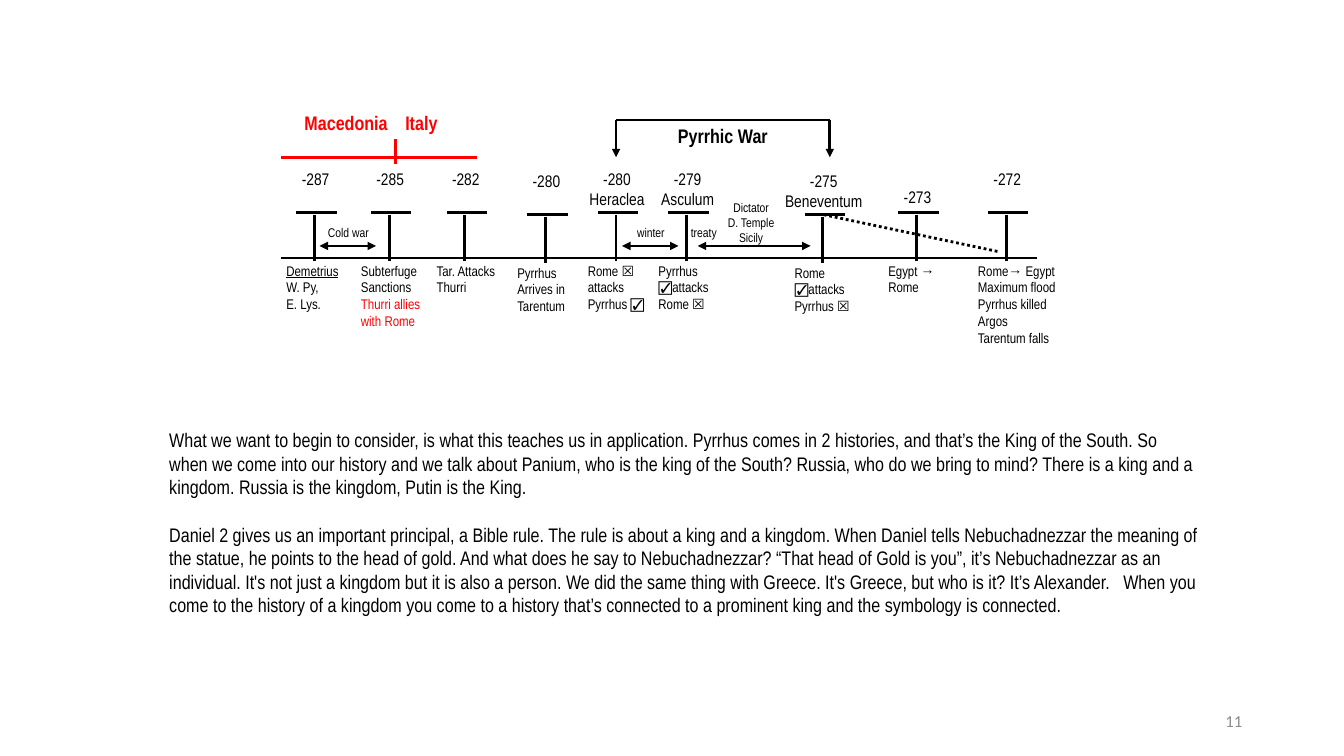
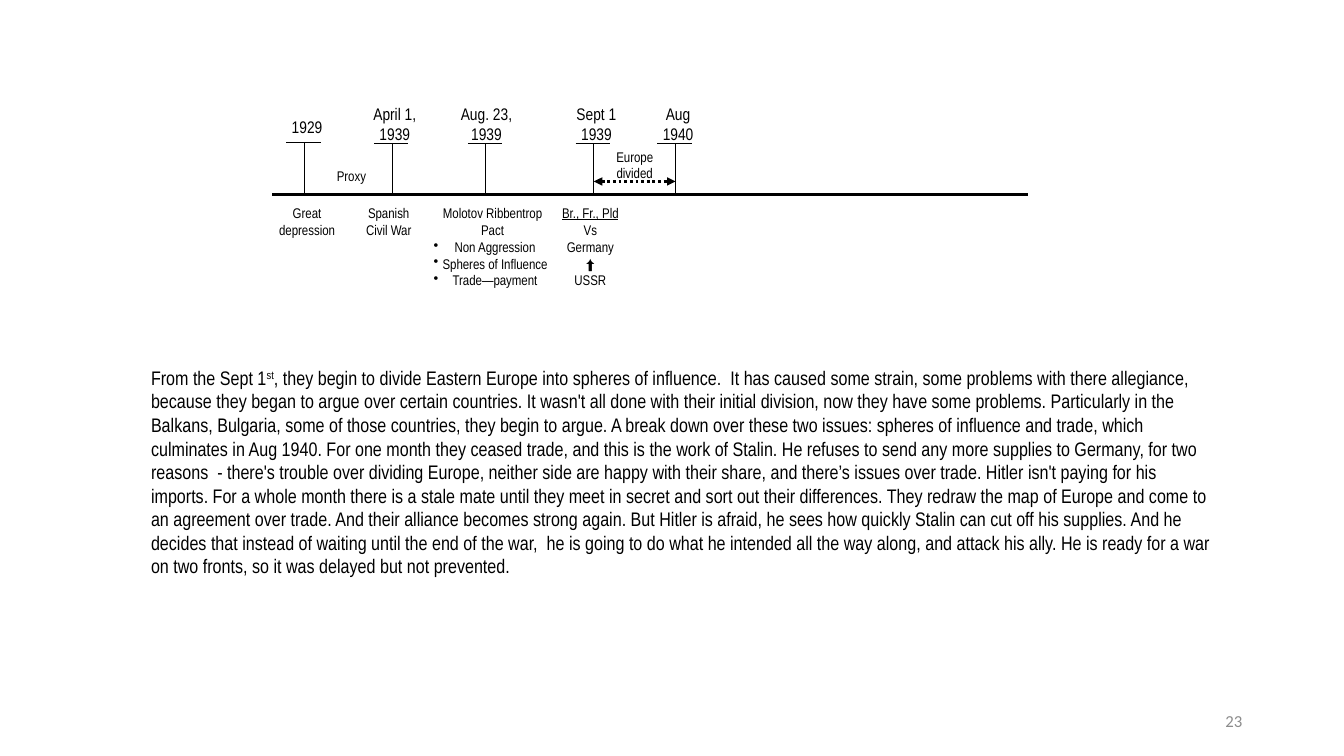
from dataclasses import dataclass
from lxml.etree import SubElement
from pptx import Presentation
from pptx.dml.color import RGBColor
from pptx.enum.dml import MSO_LINE
from pptx.enum.shapes import MSO_CONNECTOR
from pptx.enum.text import MSO_ANCHOR, PP_ALIGN
from pptx.oxml.ns import qn
from pptx.util import Inches, Pt


@dataclass(frozen=True)
class Theme:
    ink: RGBColor = RGBColor(0, 0, 0)
    accent: RGBColor = RGBColor(255, 0, 0)
    muted: RGBColor = RGBColor(0x8C, 0x8C, 0x8C)
    font: str = "Arial Narrow"
    symbol_font: str = "Arial"
    number_font: str = "Calibri"
    body: int = 14
    date: int = 12
    label: int = 10
    span: int = 9
    heavy: float = 2
    fine: float = 0.75


theme = Theme()
SYMBOL = {"font": theme.symbol_font}
UNDERLINED = {"underline": True}
RED = {"color": theme.accent}
SUPERSCRIPT = {"baseline": "30000"}


def add_text(slide, left, top, width, height, paragraphs, size, align=PP_ALIGN.LEFT,
             style=None, inset=0.04, gap=0, bullets_from=None):
    frame = slide.shapes.add_textbox(Inches(left), Inches(top), Inches(width), Inches(height)).text_frame
    frame.word_wrap = True
    if inset is not None:
        frame.margin_left = frame.margin_right = Inches(inset)
        frame.margin_top = frame.margin_bottom = Inches(inset)
    for index, content in enumerate(paragraphs):
        paragraph = frame.paragraphs[0] if index == 0 else frame.add_paragraph()
        paragraph.alignment = align
        paragraph.space_after = Pt(gap)
        if bullets_from is not None and index >= bullets_from:
            SubElement(paragraph._p.get_or_add_pPr(), qn("a:buChar")).set("char", "•")
        for words, run_style in [(content, {})] if isinstance(content, str) else content:
            look = {**(style or {}), **run_style}
            run = paragraph.add_run()
            run.text = words
            run.font.size = Pt(size)
            run.font.name = look.get("font", theme.font)
            run.font.color.rgb = look.get("color", theme.ink)
            run.font.bold = look.get("bold", False)
            run.font.underline = look.get("underline", False)
            if "baseline" in look:
                run._r.get_or_add_rPr().set("baseline", look["baseline"])
    return frame


def add_line(slide, x1, y1, x2, y2, weight=theme.heavy, color=theme.ink, dotted=False, arrows=()):
    connector = slide.shapes.add_connector(
        MSO_CONNECTOR.STRAIGHT, Inches(x1), Inches(y1), Inches(x2), Inches(y2))
    connector.line.color.rgb = color
    connector.line.width = Pt(weight)
    if dotted:
        connector.line.dash_style = MSO_LINE.ROUND_DOT
    for end in arrows:
        SubElement(connector.line._get_or_add_ln(), qn(f"a:{end}")).set("type", "triangle")
    SubElement(connector._element.spPr, qn("a:effectLst"))


BOTH_ENDS = ("headEnd", "tailEnd")

prs = Presentation()
prs.slide_width, prs.slide_height = Inches(13.33), Inches(7.5)
blank = prs.slide_layouts[6]
pyrrhus = prs.slides.add_slide(blank)
alliance = prs.slides.add_slide(blank)

for slide, number in ((pyrrhus, "11"), (alliance, "23")):
    footer = add_text(slide, 9.42, 6.95, 3, 0.4, [number], theme.date, PP_ALIGN.RIGHT,
                      {"font": theme.number_font, "color": theme.muted}, inset=None)
    footer.vertical_anchor = MSO_ANCHOR.MIDDLE

add_line(pyrrhus, 2.79, 2.56, 10.29, 2.56)

ancient_events = [
    (3.12, 0, 1.63, ["-287"], 0.62, [[("Demetrius", UNDERLINED)], "W. Py,", "E. Lys."]),
    (3.86, 0, 1.63, ["-285"], 0.75, ["Subterfuge", "Sanctions", [("Thurri allies with Rome", RED)]]),
    (4.61, 0, 1.63, ["-282"], 0.75, ["Tar. Attacks Thurri"]),
    (5.41, 0.02, 1.65, ["-280"], 0.75, ["Pyrrhus", "Arrives in", "Tarentum"]),
    (6.11, 0, 1.63, ["-280", "Heraclea"], 0.75,
     [[("Rome ", {}), ("☒", SYMBOL)], [("attacks Pyrrhus ", {}), ("☑", SYMBOL)]]),
    (6.81, 0, 1.63, ["-279", "Asculum"], 0.75,
     [[("Pyrrhus ", {}), ("☑", SYMBOL), ("attacks Rome ", {}), ("☒", SYMBOL)]]),
    (8.16, 0.02, 1.65, ["-275", "Beneventum"], 0.75,
     [[("Rome ", {}), ("☑", SYMBOL), ("attacks Pyrrhus ", {}), ("☒", SYMBOL)]]),
    (9.09, 0, 1.81, ["-273"], 0.75, ["Egypt →", "Rome"]),
    (9.98, 0, 1.63, ["-272"], 0.86,
     ["Rome→ Egypt", "Maximum flood", "Pyrrhus killed", "Argos", "Tarentum falls"]),
]
for x, drop, date_top, date, label_width, label in ancient_events:
    add_line(pyrrhus, x, 2.13 + drop, x, 2.59 + drop)
    add_line(pyrrhus, x - 0.18, 2.11 + drop, x + 0.22, 2.11 + drop)
    add_text(pyrrhus, x - 0.43, date_top, 0.88, 0.52, date, theme.date, PP_ALIGN.CENTER)
    add_text(pyrrhus, x - 0.32, 2.56 + drop, label_width, 0.75, label, theme.label)

for start, end in ((3.17, 3.73), (6.17, 6.73), (6.92, 8.04)):
    add_line(pyrrhus, start, 2.44, end, 2.44, arrows=BOTH_ENDS)
for left, top, width, words in (
    (3.11, 2.19, 0.69, ["Cold war"]),
    (6.11, 2.19, 0.69, ["winter"]),
    (6.79, 2.19, 0.38, ["treaty"]),
    (7.17, 1.94, 0.56, ["Dictator", "D. Temple", "Sicily"]),
):
    add_text(pyrrhus, left, top, width, 0.39, words, theme.span, PP_ALIGN.CENTER)
add_line(pyrrhus, 8.17, 2.13, 9.92, 2.5, dotted=True)

war_start, war_end = 6.11, 8.23
add_line(pyrrhus, war_start, 1.19, war_end, 1.19)
for x in (war_start, war_end):
    add_line(pyrrhus, x, 1.19, x, 1.56, arrows=("tailEnd",))
add_text(pyrrhus, 6.36, 1.19, 1.62, 0.38, ["Pyrrhic War"], theme.body, PP_ALIGN.CENTER, {"bold": True})

add_text(pyrrhus, 2.98, 1.06, 1.5, 0.5, ["Macedonia\tItaly"], theme.body, style={"bold": True, **RED})
add_line(pyrrhus, 3.92, 1.38, 3.92, 1.63, color=theme.accent)
add_line(pyrrhus, 2.79, 1.56, 4.73, 1.56, color=theme.accent)

add_text(pyrrhus, 1.58, 4.2, 10.41, 2.19, [
    "What we want to begin to consider, is what this teaches us in application. Pyrrhus comes in 2 "
    "histories, and that’s the King of the South. So when we come into our history and we talk about "
    "Panium, who is the king of the South? Russia, who do we bring to mind? There is a king and a "
    "kingdom. Russia is the kingdom, Putin is the King.",
    "Daniel 2 gives us an important principal, a Bible rule. The rule is about a king and a kingdom. "
    "When Daniel tells Nebuchadnezzar the meaning of the statue, he points to the head of gold. And "
    "what does he say to Nebuchadnezzar? “That head of Gold is you”, it’s Nebuchadnezzar as an "
    "individual. It's not just a kingdom but it is also a person. We did the same thing with Greece. "
    "It's Greece, but who is it? It’s Alexander.   When you come to the history of a kingdom you come "
    "to a history that’s connected to a prominent king and the symbology is connected.",
], theme.body, inset=None, gap=17)

add_line(alliance, 2.7, 1.93, 10.2, 1.93)

modern_events = [
    (3.02, 1.41, 3.04, 1.12, ["1929"]),
    (3.89, 1.42, 3.91, 0.99, ["April 1, 1939"]),
    (4.82, 1.42, 4.82, 0.99, ["Aug. 23,", "1939"]),
    (5.89, 1.42, 5.91, 0.99, ["Sept 1", "1939"]),
    (6.7, 1.42, 6.72, 0.99, ["Aug", "1940"]),
]
for x, bar_y, date_x, date_top, date in modern_events:
    add_line(alliance, x, bar_y + 0.01, x, bar_y + 0.52, theme.fine)
    add_line(alliance, x - 0.18, bar_y, x + 0.16, bar_y, theme.fine)
    add_text(alliance, date_x - 0.34, date_top, 0.69, 0.5, date, theme.date, PP_ALIGN.CENTER)

for left, top, width, height, words, bullets_from in (
    (2.7, 1.99, 0.69, 0.56, ["Great", "depression"], None),
    (3.14, 1.62, 0.69, 0.25, ["Proxy"], None),
    (3.51, 1.99, 0.69, 0.56, ["Spanish Civil War"], None),
    (4.26, 1.99, 1.25, 0.94,
     ["Molotov Ribbentrop Pact", "Non Aggression", "Spheres of Influence", "Trade—payment"], 1),
    (5.51, 1.99, 0.69, 0.94,
     [[("Br., Fr., Pld", UNDERLINED)], "Vs", "Germany", [("⬆", SYMBOL)], "USSR"], None),
    (5.95, 1.43, 0.69, 0.44, ["Europe divided"], None),
):
    add_text(alliance, left, top, width, height, words, theme.label, PP_ALIGN.CENTER,
             bullets_from=bullets_from)
add_line(alliance, 5.89, 1.8, 6.7, 1.8, dotted=True, arrows=BOTH_ENDS)

add_text(alliance, 1.4, 3.58, 10.77, 2.42, [[
    ("From the Sept 1", {}),
    ("st", SUPERSCRIPT),
    (", they begin to divide Eastern Europe into spheres of influence.  It has caused some strain, "
     "some problems with there allegiance, because they began to argue over certain countries. It "
     "wasn't all done with their initial division, now they have some problems. Particularly in the "
     "Balkans, Bulgaria, some of those countries, they begin to argue. A break down over these two "
     "issues: spheres of influence and trade, which culminates in Aug 1940. ", {}),
    ("For one month they ceased trade, and this is the work of Stalin. He refuses to send any more "
     "supplies to Germany, for two reasons  - there's trouble over dividing Europe, neither side are "
     "happy with their share, and there’s issues over trade. Hitler isn't paying for his imports. ", {}),
    ("For a whole month there is a stale mate until they meet in secret and sort out their "
     "differences. They redraw the map of Europe and come to an agreement over trade. And their "
     "alliance becomes strong again. But Hitler is afraid, he sees how quickly Stalin can cut off his "
     "supplies. And he decides that instead of waiting until the end of the war,  he is going to do "
     "what he intended all the way along, and attack his ally. He is ready for a war on two fronts, "
     "so it was delayed but not prevented.", {}),
]], theme.body, inset=None)

prs.save("out.pptx")
